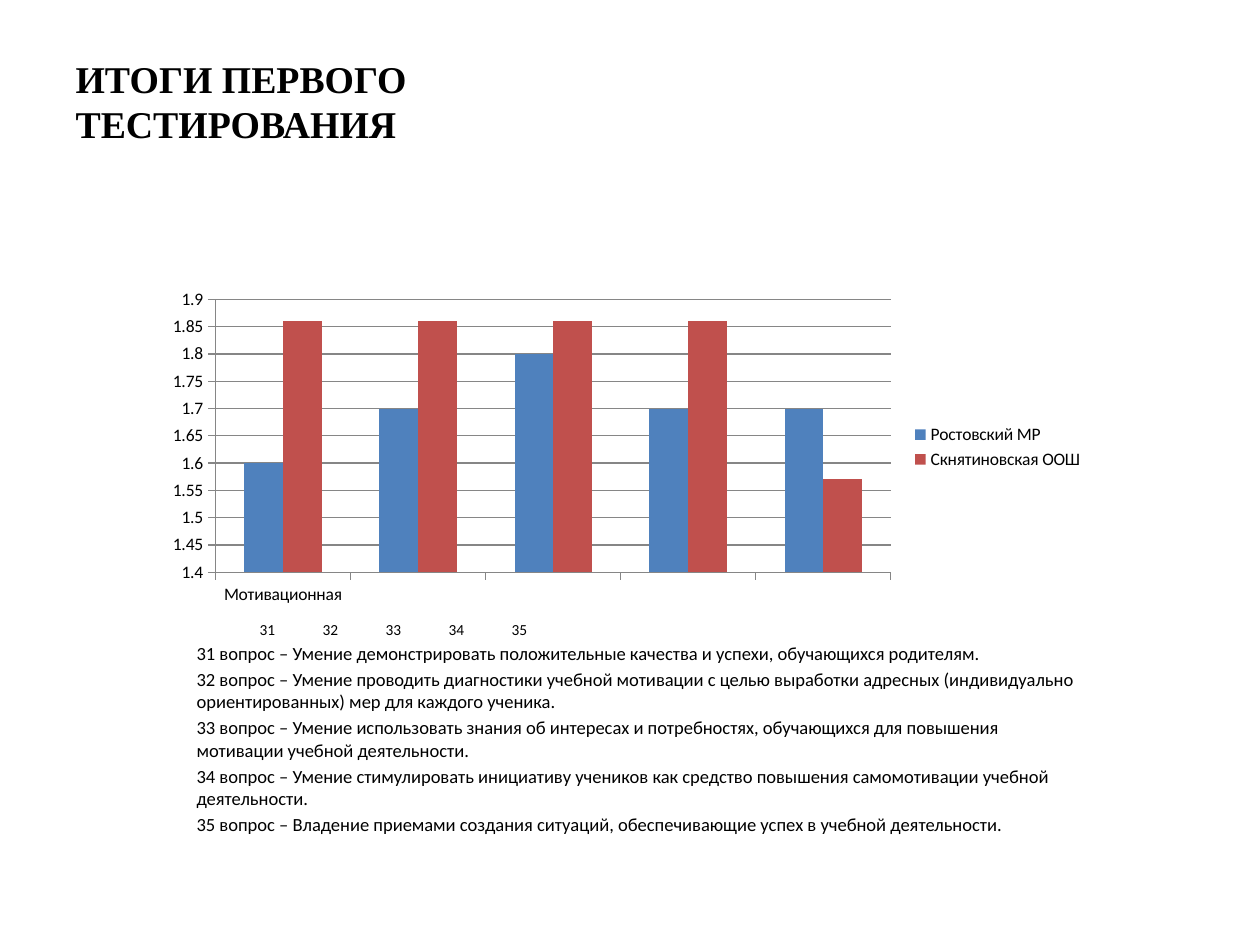
from dataclasses import dataclass

import pptx
import pptx.chart.data
import pptx.dml.color
import pptx.enum.chart
import pptx.enum.text
import pptx.oxml.ns
import pptx.util
from lxml import etree

EMU_PER_PX = 914400 / 126


@dataclass(frozen=True)
class Theme:
    text: str = "000000"
    grid: str = "868686"
    title_font: str = "Times New Roman"
    body_font: str = "Calibri"
    title_size: float = 21.6
    body_size: float = 10.6
    number_size: float = 8.8
    chart_size: float = 10


@dataclass(frozen=True)
class Box:
    left: int
    top: int
    width: int
    height: int


@dataclass(frozen=True)
class Series:
    name: str
    color: str
    values: tuple[float, ...]


THEME = Theme()
TITLE_BOX = Box(63, 38, 415, 160)
BODY_BOX = Box(184, 611, 912, 238)
CHART_BOX = Box(154, 283, 942, 328)
FIRST_TAB, TAB_STEP = 80, 134

CATEGORIES = ("Мотивационная", "", "", "", "")
SERIES = (
    Series("Ростовский МР", "4F81BD", (1.6, 1.7, 1.8, 1.7, 1.7)),
    Series("Скнятиновская ООШ", "C0504D", (1.86, 1.86, 1.86, 1.86, 1.57)),
)
QUESTIONS = {
    31: "Умение демонстрировать положительные качества и успехи, обучающихся родителям.",
    32: "Умение проводить диагностики учебной мотивации с целью выработки адресных "
        "(индивидуально ориентированных) мер для каждого ученика.",
    33: "Умение использовать знания об интересах и потребностях, обучающихся "
        "для повышения мотивации учебной деятельности.",
    34: "Умение стимулировать инициативу учеников как средство повышения "
        "самомотивации учебной деятельности.",
    35: "Владение приемами создания ситуаций, обеспечивающие успех в учебной деятельности.",
}


def px(n: int) -> pptx.util.Emu:
    return pptx.util.Emu(round(n * EMU_PER_PX))


def rgb(color: str) -> pptx.dml.color.RGBColor:
    return pptx.dml.color.RGBColor.from_string(color)


def place(sp, box: Box) -> None:
    sp.left, sp.top = px(box.left), px(box.top)
    sp.width, sp.height = px(box.width), px(box.height)


def style_font(font, name: str, size: float, bold: bool = False) -> None:
    font.name, font.size, font.bold = name, pptx.util.Pt(size), bold
    font.color.rgb = rgb(THEME.text)


def remove_bullet(p) -> None:
    pPr = p._p.get_or_add_pPr()
    pPr.set("marL", "0")
    pPr.set("indent", "0")
    etree.SubElement(pPr, pptx.oxml.ns.qn("a:buNone"))


def add_center_tabs(p, count: int) -> None:
    tabs = etree.SubElement(p._p.get_or_add_pPr(), pptx.oxml.ns.qn("a:tabLst"))
    for i in range(count):
        etree.SubElement(tabs, pptx.oxml.ns.qn("a:tab"),
                         pos=str(px(FIRST_TAB + i * TAB_STEP)), algn="ctr")


def fill_title(sp) -> None:
    place(sp, TITLE_BOX)
    tf = sp.text_frame
    tf.text = "ИТОГИ ПЕРВОГО ТЕСТИРОВАНИЯ"
    tf.word_wrap = True
    tf.auto_size = pptx.enum.text.MSO_AUTO_SIZE.NONE
    tf.vertical_anchor = pptx.enum.text.MSO_ANCHOR.BOTTOM
    tf.margin_bottom = px(52)
    p = tf.paragraphs[0]
    p.alignment = pptx.enum.text.PP_ALIGN.LEFT
    style_font(p.runs[0].font, THEME.title_font, THEME.title_size, bold=True)


def fill_body(sp) -> None:
    place(sp, BODY_BOX)
    tf = sp.text_frame
    tf.word_wrap = True
    tf.auto_size = pptx.enum.text.MSO_AUTO_SIZE.NONE
    tf.margin_top = px(9)
    numbers = "".join(f"\t{n}" for n in QUESTIONS)
    lines = [f"{n} вопрос – {text}" for n, text in QUESTIONS.items()]
    tf.text = "\n".join([numbers, *lines])
    for i, p in enumerate(tf.paragraphs):
        remove_bullet(p)
        if i == 0:
            add_center_tabs(p, len(QUESTIONS))
        p.space_before = pptx.util.Pt(2.1 if i else 0)
        size = THEME.body_size if i else THEME.number_size
        for r in p.runs:
            style_font(r.font, THEME.body_font, size)


def style_line(line) -> None:
    line.color.rgb = rgb(THEME.grid)
    line.width = pptx.util.Pt(0.75)


def add_results_chart(s, box: Box) -> None:
    data = pptx.chart.data.CategoryChartData()
    data.categories = CATEGORIES
    for series in SERIES:
        data.add_series(series.name, series.values)
    chart = s.shapes.add_chart(
        pptx.enum.chart.XL_CHART_TYPE.COLUMN_CLUSTERED,
        px(box.left), px(box.top), px(box.width), px(box.height), data).chart
    style_font(chart.font, THEME.body_font, THEME.chart_size)
    chart.has_title = False

    # Columns
    plot = chart.plots[0]
    plot.gap_width, plot.overlap = 150, 0
    plot.vary_by_categories = False
    for drawn, series in zip(plot.series, SERIES):
        drawn.format.fill.solid()
        drawn.format.fill.fore_color.rgb = rgb(series.color)

    # Axes and legend
    axis = chart.value_axis
    axis.minimum_scale, axis.maximum_scale, axis.major_unit = 1.4, 1.9, 0.05
    axis.has_major_gridlines = True
    style_line(axis.major_gridlines.format.line)
    for ax in (axis, chart.category_axis):
        ax.major_tick_mark = pptx.enum.chart.XL_TICK_MARK.OUTSIDE
        style_line(ax.format.line)
    axis.tick_labels.number_format = "General"
    axis.tick_labels.number_format_is_linked = False
    chart.has_legend = True
    chart.legend.position = pptx.enum.chart.XL_LEGEND_POSITION.RIGHT
    chart.legend.include_in_layout = False


def main() -> None:
    prs = pptx.Presentation()
    prs.slide_width, prs.slide_height = px(1260), px(945)
    s = prs.slides.add_slide(prs.slide_layouts[1])
    fill_title(s.shapes.title)
    fill_body(s.placeholders[1])
    add_results_chart(s, CHART_BOX)
    prs.save("out.pptx")


if __name__ == "__main__":
    main()
